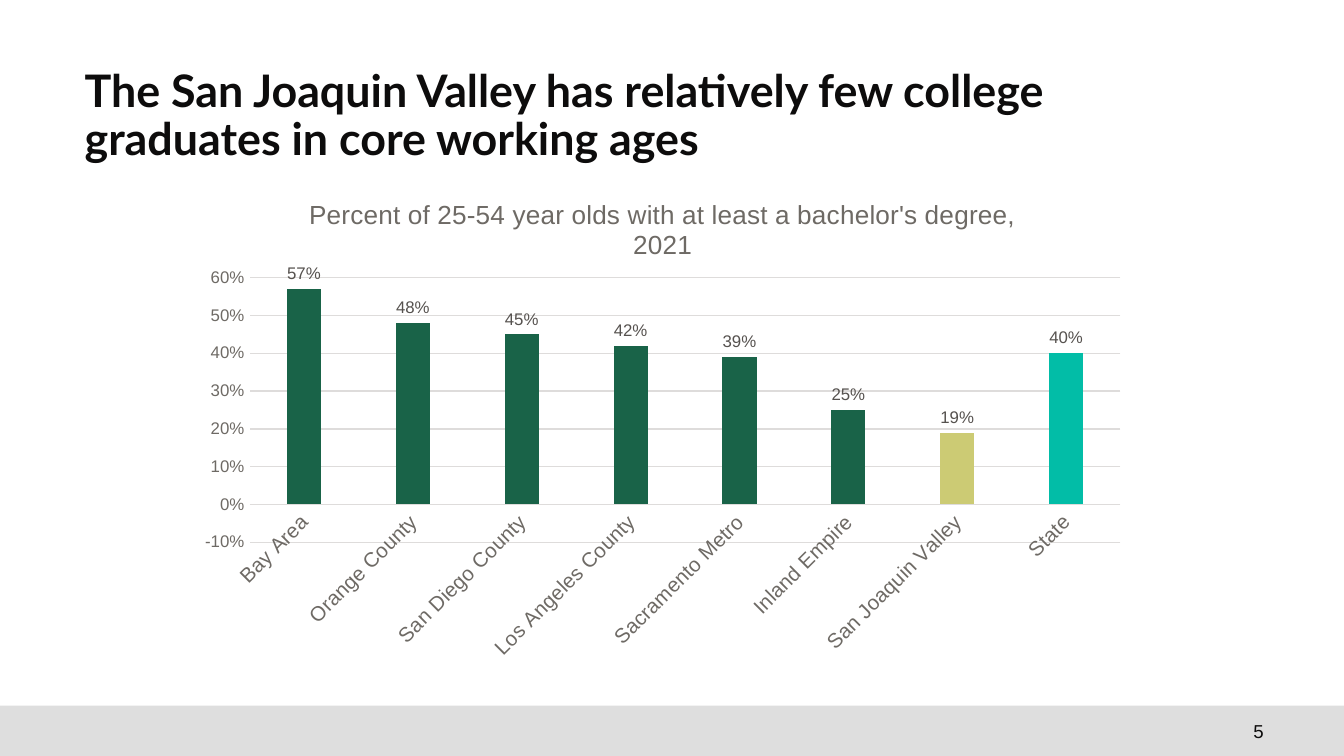
from dataclasses import dataclass

from lxml.etree import SubElement
from pptx import Presentation
from pptx.chart.data import CategoryChartData
from pptx.dml.color import RGBColor
from pptx.enum.chart import XL_CHART_TYPE as ChartType
from pptx.enum.chart import XL_LABEL_POSITION as LabelPosition
from pptx.enum.chart import XL_TICK_MARK as TickMark
from pptx.enum.shapes import MSO_SHAPE as ShapeKind
from pptx.enum.text import MSO_ANCHOR as Anchor
from pptx.enum.text import MSO_AUTO_SIZE as AutoSize
from pptx.enum.text import PP_ALIGN as Align
from pptx.oxml.ns import qn
from pptx.util import Cm, Pt

INK = "0D0C0C"
MUTED = "6E6A65"
LABEL = "56524F"
GRID = "DEDCDB"
BAND = "DEDEDE"
GREEN = "196348"
OLIVE = "CCCB74"
TEAL = "02BDA7"


@dataclass
class Box:
    left: float
    top: float
    width: float
    height: float

    def lengths(self) -> tuple:
        return Cm(self.left), Cm(self.top), Cm(self.width), Cm(self.height)


@dataclass
class Region:
    name: str
    share: float
    color: str = GREEN


REGIONS = [
    Region("Bay Area", 0.57),
    Region("Orange County", 0.48),
    Region("San Diego County", 0.45),
    Region("Los Angeles County", 0.42),
    Region("Sacramento Metro", 0.39),
    Region("Inland Empire", 0.25),
    Region("San Joaquin Valley", 0.19, OLIVE),
    Region("State", 0.40, TEAL),
]
PLOT_AREA = {"x": 0.067, "y": 0.203, "w": 0.913, "h": 0.528}


def color(value: str) -> RGBColor:
    return RGBColor.from_string(value)


def fill(target, value: str) -> None:
    target.solid()
    target.fore_color.rgb = color(value)


def format_font(font, size: float, ink: str, name: str = "Arial", bold: bool = False) -> None:
    font.size = Pt(size)
    font.name = name
    font.bold = bold
    font.color.rgb = color(ink)


def write_text(frame, text: str, *, size: float, ink: str, name: str = "Arial",
               bold: bool = False, align=Align.LEFT, spacing: float = 1.0) -> None:
    paragraph = frame.paragraphs[0]
    paragraph.alignment = align
    paragraph.line_spacing = spacing
    run = paragraph.add_run()
    run.text = text
    format_font(run.font, size, ink, name, bold)


def add_title(slide, box: Box, text: str) -> None:
    title = slide.shapes.title
    title.left, title.top, title.width, title.height = box.lengths()
    frame = title.text_frame
    frame.margin_left = frame.margin_right = frame.margin_top = frame.margin_bottom = 0
    frame.word_wrap = True
    frame.auto_size = AutoSize.NONE
    frame.vertical_anchor = Anchor.TOP
    write_text(frame, text, size=24, ink=INK, name="Lato", bold=True, spacing=0.9)


def add_footer(slide, band: Box, number_box: Box, number: str) -> None:
    shape = slide.shapes.add_shape(ShapeKind.RECTANGLE, *band.lengths())
    shape.shadow.inherit = False
    fill(shape.fill, BAND)
    shape.line.fill.background()
    frame = slide.shapes.add_textbox(*number_box.lengths()).text_frame
    frame.word_wrap = True
    frame.vertical_anchor = Anchor.MIDDLE
    write_text(frame, number, size=10, ink=INK, align=Align.RIGHT)


def style_line(line) -> None:
    line.color.rgb = color(GRID)
    line.width = Pt(0.75)


def place_plot(chart) -> None:
    plot_area = chart.element.find(".//" + qn("c:plotArea"))
    for layout in plot_area.findall(qn("c:layout")):
        plot_area.remove(layout)
    layout = plot_area.makeelement(qn("c:layout"))
    plot_area.insert(0, layout)
    manual = SubElement(layout, qn("c:manualLayout"))
    settings = {"layoutTarget": "inner", "xMode": "edge", "yMode": "edge", **PLOT_AREA}
    for tag, value in settings.items():
        SubElement(manual, qn(f"c:{tag}")).set("val", str(value))


def style_axes(chart) -> None:
    categories, values = chart.category_axis, chart.value_axis
    for axis, size in ((categories, 11), (values, 9)):
        axis.major_tick_mark = axis.minor_tick_mark = TickMark.NONE
        format_font(axis.tick_labels.font, size, MUTED)
    style_line(categories.format.line)
    label_body = chart.element.find(f".//{qn('c:catAx')}/{qn('c:txPr')}/{qn('a:bodyPr')}")
    label_body.set("rot", "-2700000")
    values.minimum_scale, values.maximum_scale, values.major_unit = -0.1, 0.6, 0.1
    values.format.line.fill.background()
    values.has_major_gridlines = True
    style_line(values.major_gridlines.format.line)
    values.tick_labels.number_format = "0%"
    values.tick_labels.number_format_is_linked = False


def add_region_chart(slide, box: Box, title: str, regions: list[Region]) -> None:
    data = CategoryChartData(number_format="0%")
    data.categories = [region.name for region in regions]
    data.add_series("Series 1", [region.share for region in regions])
    chart = slide.shapes.add_chart(ChartType.COLUMN_CLUSTERED, *box.lengths(), data).chart
    format_font(chart.font, 10, "1A1918")
    chart.has_legend = False
    chart.has_title = True
    write_text(chart.chart_title.text_frame, title, size=14, ink=MUTED, align=Align.CENTER)
    style_axes(chart)
    place_plot(chart)

    plot = chart.plots[0]
    plot.gap_width, plot.overlap, plot.vary_by_categories = 219, -27, False
    series = plot.series[0]
    series.invert_if_negative = False
    fill(series.format.fill, GREEN)
    for index, region in enumerate(regions):
        if region.color != GREEN:
            fill(series.points[index].format.fill, region.color)
    labels = series.data_labels
    labels.show_value = True
    labels.position = LabelPosition.OUTSIDE_END
    labels.number_format = "0%"
    labels.number_format_is_linked = False
    format_font(labels.font, 9, LABEL)


def main() -> None:
    presentation = Presentation()
    presentation.slide_width, presentation.slide_height = Cm(25.4), Cm(14.29)
    slide = presentation.slides.add_slide(presentation.slide_layouts[5])
    add_footer(slide, Box(0, 13.34, 25.4, 0.95), Box(18.21, 13.34, 5.92, 0.95), "5")
    add_title(slide, Box(1.6, 1.3, 18.72, 2.03),
              "The San Joaquin Valley has relatively few college graduates in core working ages")
    add_region_chart(slide, Box(3.51, 3.33, 18.03, 9.47),
                     "Percent of 25-54 year olds with at least a bachelor's degree, 2021", REGIONS)
    presentation.save("out.pptx")


if __name__ == "__main__":
    main()
